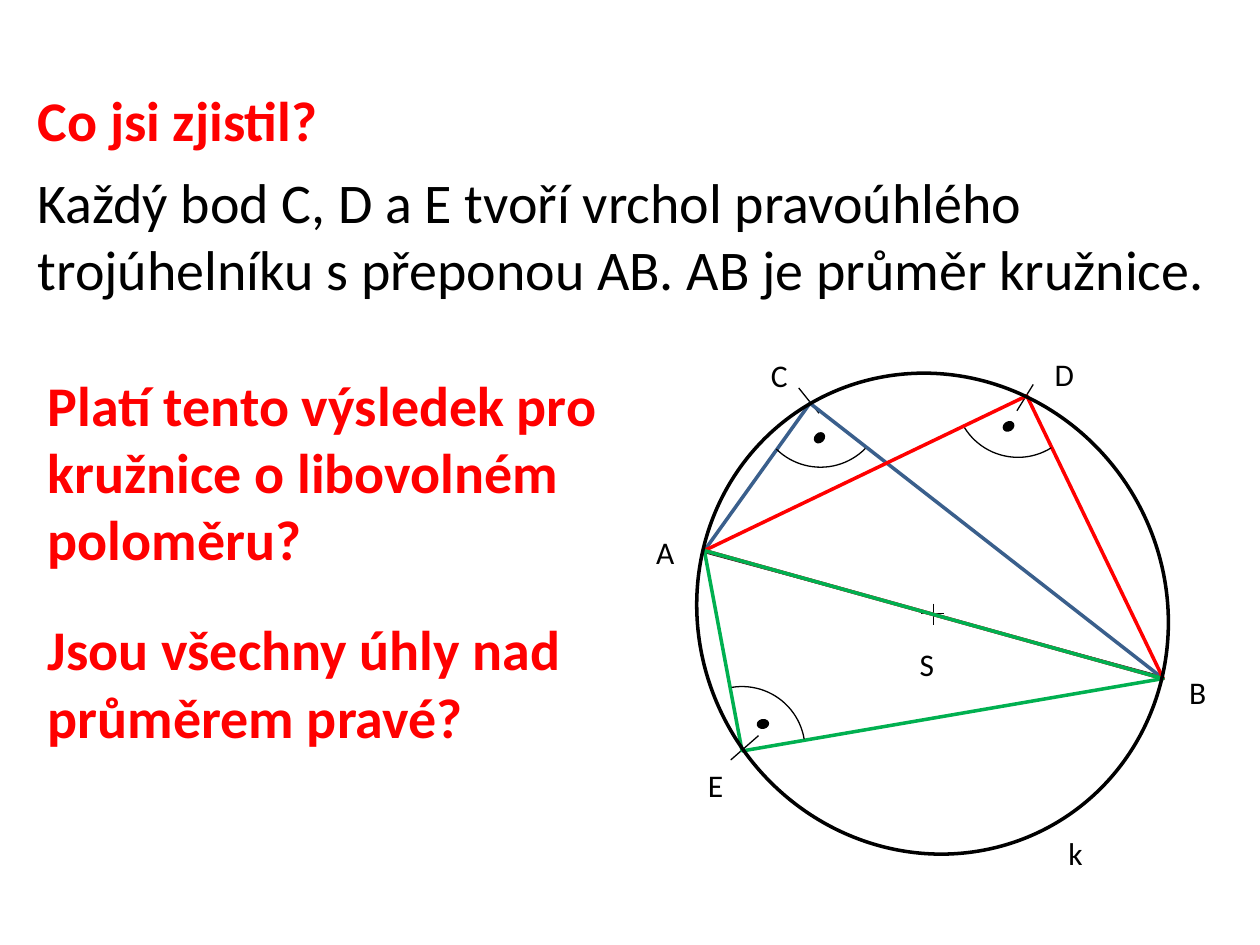
from lxml import etree
from pptx import Presentation
from pptx.dml.color import RGBColor
from pptx.enum import shapes as sh
from pptx.oxml.ns import qn
from pptx.util import Cm, Pt

BLACK, RED, BLUE, GREEN = "000000", "FF0000", "3A5F8C", "00B050"


def color(fmt, code):
    """Set a colour from a hex string."""
    fmt.rgb = RGBColor.from_string(code)


def style(shape, line, width=2, fill=None):
    """Give a shape its outline and fill, without a shadow."""
    shape.shadow.inherit = False
    color(shape.line.color, line)
    shape.line.width = Pt(width)
    if fill:
        shape.fill.solid()
        color(shape.fill.fore_color, fill)
    else:
        shape.fill.background()


def label(slide, words, box, size=18, code=BLACK, bold=False, wrap=False):
    """Add a text box with one run."""
    frame = slide.shapes.add_textbox(*map(Cm, box)).text_frame
    frame.word_wrap = wrap
    run = frame.paragraphs[0].add_run()
    run.text = words
    run.font.name = "Calibri"
    run.font.size = Pt(size)
    run.font.bold = bold
    color(run.font.color, code)


def line(slide, *ends):
    """Add a thin black line."""
    item = slide.shapes.add_connector(sh.MSO_CONNECTOR.STRAIGHT, *map(Cm, ends))
    color(item.line.color, BLACK)
    item.line.width = Pt(0.75)
    etree.SubElement(item._element.spPr, qn("a:effectLst"))


def preset(slide, kind, box, turn, width=2, fill=None):
    """Add a turned preset shape with a black outline."""
    item = slide.shapes.add_shape(kind, *map(Cm, box))
    item.rotation = turn
    style(item, BLACK, width, fill)


def triangle(slide, code, *points):
    """Add a closed triangle outline."""
    first, *rest = [(Cm(x), Cm(y)) for x, y in points]
    path = slide.shapes.build_freeform(*first)
    path.add_line_segments(rest, close=True)
    style(path.convert_to_shape(), code)


def angle(slide, arc, dot, turn):
    """Mark a right angle with an arc and a dot."""
    preset(slide, sh.MSO_SHAPE.ARC, (*arc, 2.54, 2.54), turn, 0.75)
    preset(slide, sh.MSO_SHAPE.OVAL, (*dot, 0.18, 0.13), turn, fill=BLACK)


def main():
    """Build the slide."""
    deck = Presentation()
    deck.slide_width, deck.slide_height = Cm(25.4), Cm(19.05)
    slide = deck.slides.add_slide(deck.slide_layouts[6])

    label(slide, "Každý bod C, D a E tvoří vrchol pravoúhlého trojúhelníku "
          "s přeponou AB. AB je průměr kružnice.",
          (0.51, 3.25, 24.61, 3), 32, wrap=True)

    for ends in [(14.17, 11.13, 23.44, 13.64),
                 (18.82, 12.17, 18.82, 12.6), (18.57, 12.37, 19.02, 12.37),
                 (16.1, 7.82, 16.51, 8.33), (20.83, 7.75, 20.5, 8.28),
                 (15.29, 14.83, 14.73, 15.32)]:
        line(slide, *ends)

    for name, x, y, w in [("S", 18.29, 12.88, 0.94), ("k", 21.29, 16.69, 0.84),
                          ("C", 15.29, 7.06, 0.86), ("D", 21.01, 7.04, 0.91),
                          ("E", 14.02, 15.32, 0.81), ("A", 12.98, 10.62, 0.89),
                          ("B", 23.72, 13.44, 0.86)]:
        label(slide, name, (x, y, w, 1.02))

    a, b = (14.2, 11.1), (23.45, 13.68)
    for code, top in [(BLUE, (16.33, 8.13)), (RED, (20.7, 7.98)),
                      (GREEN, (14.96, 15.14))]:
        triangle(slide, code, a, b, top)

    angle(slide, (15.27, 6.88), (16.43, 8.76), 134.6)
    angle(slide, (13.69, 13.84), (15.29, 14.53), 350.5)
    angle(slide, (19.25, 6.68), (20.24, 8.53), 148)
    preset(slide, sh.MSO_SHAPE.OVAL, (14.1, 7.47, 9.4, 9.8), 329)

    for words, box, wrap in [
            ("Co jsi zjistil?", (0.51, 1.6, 6.38, 1.63), False),
            ("Platí tento výsledek pro kružnice o libovolném poloměru?",
             (0.71, 7.34, 11.81, 4.37), True),
            ("Jsou všechny úhly nad průměrem pravé?",
             (0.71, 12.27, 11.81, 3), True)]:
        label(slide, words, box, 32, RED, True, wrap)

    deck.save("out.pptx")


if __name__ == "__main__":
    main()
